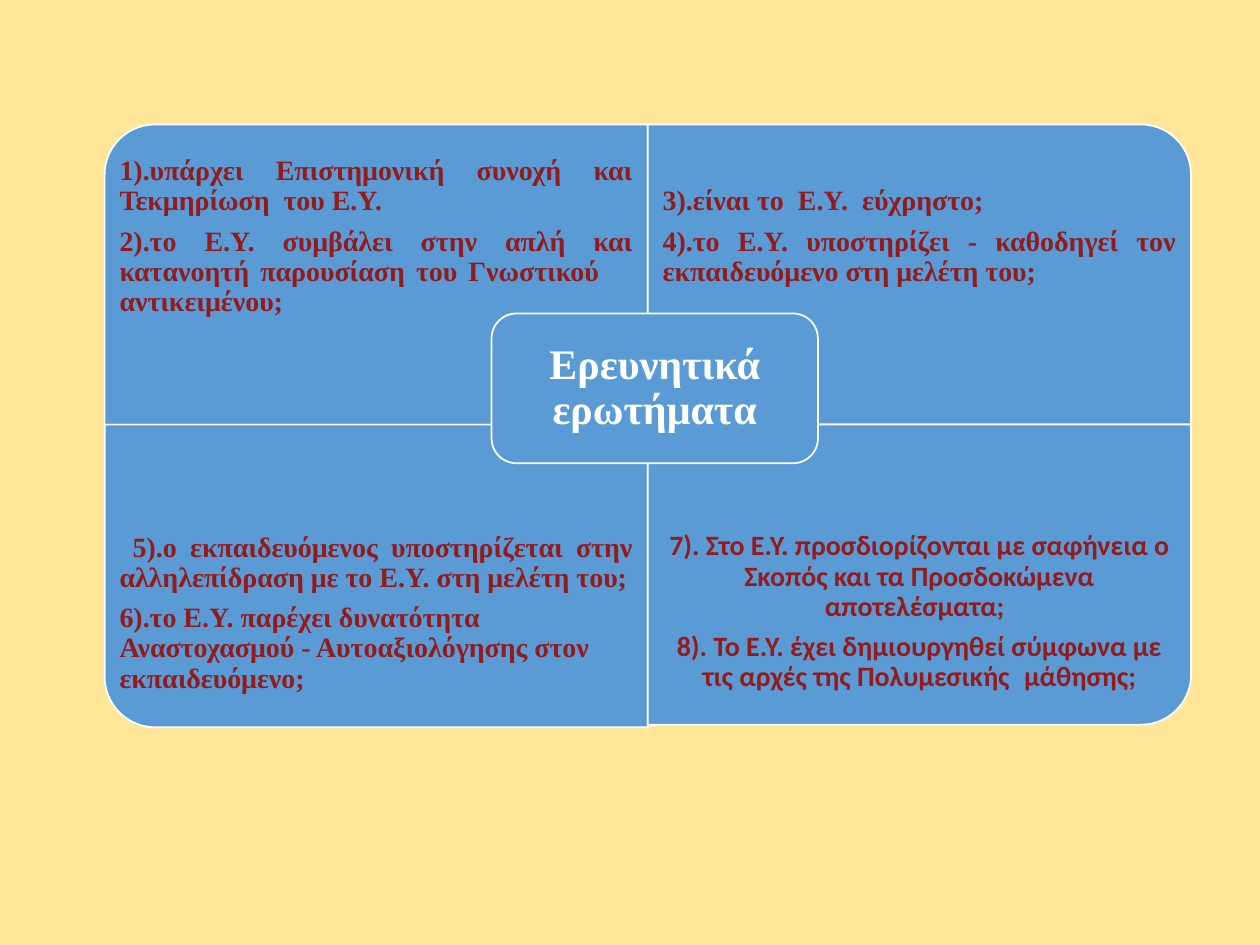
from pptx import Presentation
from pptx.dml.color import RGBColor
from pptx.enum.shapes import MSO_SHAPE
from pptx.enum.text import MSO_ANCHOR, PP_ALIGN
from pptx.util import Cm, Pt

THEME = {
    "back": "FFE699", "fill": "5B9BD5", "line": "FFFFFF",
    "ink": "931B1B", "title": "FFFFFF",
    "serif": "Times New Roman", "sans": "Calibri",
    "body": 16, "head": 24,
}
JUST, LEFT, MID = PP_ALIGN.JUSTIFY, PP_ALIGN.LEFT, PP_ALIGN.CENTER

# column, row, turn of the rounded corner, panel height, font, (alignment, text)
PANELS = [
    (0, 0, 270, 6.05, "serif", [
        (JUST, "1).υπάρχει Επιστημονική συνοχή και Τεκμηρίωση  του Ε.Υ."),
        (JUST, "2).το Ε.Υ. συμβάλει στην απλή και κατανοητή παρουσίαση του Γνωστικού    αντικειμένου;"),
    ]),
    (1, 0, 0, 6.05, "serif", [
        (JUST, "3).είναι το  Ε.Υ.  εύχρηστο;"),
        (JUST, "4).το Ε.Υ. υποστηρίζει - καθοδηγεί τον εκπαιδευόμενο στη μελέτη του;"),
    ]),
    (0, 1, 180, 6.1, "serif", [
        (JUST, " 5).ο εκπαιδευόμενος υποστηρίζεται στην αλληλεπίδραση με το Ε.Υ. στη μελέτη του;"),
        (LEFT, "6).το Ε.Υ. παρέχει δυνατότητα Αναστοχασμού - Αυτοαξιολόγησης στον εκπαιδευόμενο;"),
    ]),
    (1, 1, 90, 6.05, "sans", [
        (MID, "7). Στο Ε.Υ. προσδιορίζονται με σαφήνεια ο Σκοπός και τα Προσδοκώμενα αποτελέσματα;\t"),
        (MID, "8). Το Ε.Υ. έχει δημιουργηθεί σύμφωνα με τις αρχές της Πολυμεσικής \t μάθησης;"),
    ]),
]
HUB = [(MID, "Ερευνητικά ερωτήματα")]

X, Y, WIDE, HIGH = 2.11, 2.51, 10.95, 6.05
HUB_BOX = (9.91, 6.32, 6.58, 3.02)
HUB_GAP = 0.15
TEXT_PART = 0.75  # share of a panel's height that holds text, on its outer side


def color(name):
    return RGBColor.from_string(THEME[name])


def add_panel(group, kind, box, turn=0):
    """Draw a filled shape that covers box after it has been turned."""
    x, y, w, h = box
    if turn % 180:
        x, y, w, h = x + (w - h) / 2, y + (h - w) / 2, h, w
    shape = group.shapes.add_shape(kind, Cm(x), Cm(y), Cm(w), Cm(h))
    shape.rotation = turn
    shape.shadow.inherit = False
    shape.fill.solid()
    shape.fill.fore_color.rgb = color("fill")
    shape.line.color.rgb = color("line")
    shape.line.width = Pt(1)


def add_text(group, box, paras, font, size, ink, inset):
    frame = group.shapes.add_textbox(*map(Cm, box)).text_frame
    frame.word_wrap = True
    frame.vertical_anchor = MSO_ANCHOR.MIDDLE
    for side in ("left", "top", "right", "bottom"):
        setattr(frame, f"margin_{side}", Cm(inset))
    for i, (align, text) in enumerate(paras):
        para = frame.add_paragraph() if i else frame.paragraphs[0]
        form = {"alignment": align, "line_spacing": 0.9,
                "space_after": Pt(THEME[size] * 0.35)}
        for name, value in form.items():
            setattr(para, name, value)
        run = para.add_run()
        run.text = text
        form = {"name": THEME[font], "size": Pt(THEME[size]), "bold": True}
        for name, value in form.items():
            setattr(run.font, name, value)
        run.font.color.rgb = color(ink)


def main():
    deck = Presentation()
    deck.slide_width, deck.slide_height = Cm(25.4), Cm(19.05)
    slide = deck.slides.add_slide(deck.slide_layouts[6])
    slide.background.fill.solid()
    slide.background.fill.fore_color.rgb = color("back")
    group = slide.shapes.add_group_shape()

    for col, row, turn, high, font, paras in PANELS:
        x, y = X + col * WIDE, Y + row * HIGH
        add_panel(group, MSO_SHAPE.ROUND_1_RECTANGLE, (x, y, WIDE, high), turn)
        part = high * TEXT_PART
        top = y + row * (high - part)
        add_text(group, (x, top, WIDE, part), paras, font, "body", "ink", 0.3)

    add_panel(group, MSO_SHAPE.ROUNDED_RECTANGLE, HUB_BOX)
    x, y, w, h = HUB_BOX
    inner = (x + HUB_GAP, y + HUB_GAP, w - 2 * HUB_GAP, h - 2 * HUB_GAP)
    add_text(group, inner, HUB, "serif", "head", "title", 0.25)
    deck.save("out.pptx")


if __name__ == "__main__":
    main()
